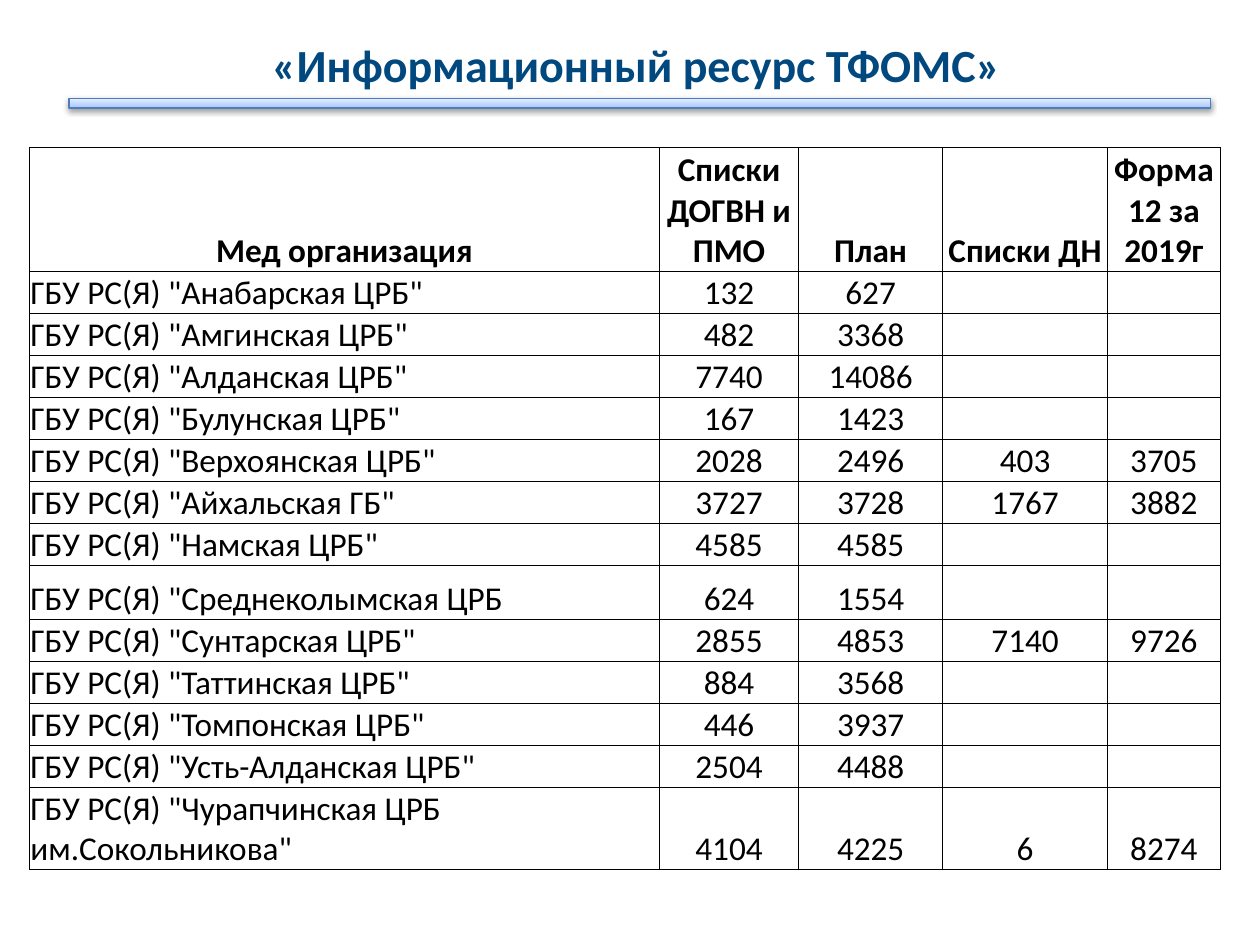
"""Build the slide comparing screening lists and plans by medical organisation."""
from dataclasses import dataclass

from lxml import etree
from pptx import Presentation
from pptx import util as u
from pptx.dml.color import RGBColor
from pptx.enum import shapes, text
from pptx.oxml import ns

FONT = "Calibri"
BLACK = RGBColor(0x00, 0x00, 0x00)
NAVY = RGBColor(0x00, 0x48, 0x7E)
BLUE = RGBColor(0x4B, 0x7E, 0xBC)
BAR_STOPS = (
    (0, RGBColor(0xA4, 0xC4, 0xFF)),
    (35, RGBColor(0xBF, 0xD4, 0xFF)),
    (100, RGBColor(0xE6, 0xEE, 0xFF)),
)
CENTER, LEFT = text.PP_ALIGN.CENTER, text.PP_ALIGN.LEFT
HEADER_HEIGHT, ROW_HEIGHT = 70.6, 24


@dataclass(frozen=True)
class Column:
    title: str
    width: float
    align: text.PP_ALIGN = CENTER


@dataclass(frozen=True)
class Organisation:
    name: str
    screened: int
    plan: int
    followed: int | None = None
    form: int | None = None
    height: float = ROW_HEIGHT

    def values(self) -> list[str]:
        numbers = (self.screened, self.plan, self.followed, self.form)
        name = f"ГБУ РС(Я) {self.name}"
        return [name] + ["" if number is None else str(number) for number in numbers]


COLUMNS = (
    Column("Мед организация", 360, LEFT),
    Column("Списки ДОГВН и ПМО", 79.6),
    Column("План", 82.2),
    Column("Списки ДН", 94.4),
    Column("Форма 12 за 2019г", 64.2),
)
ORGANISATIONS = (
    Organisation('"Анабарская ЦРБ"', 132, 627),
    Organisation('"Амгинская ЦРБ"', 482, 3368),
    Organisation('"Алданская ЦРБ"', 7740, 14086),
    Organisation('"Булунская ЦРБ"', 167, 1423),
    Organisation('"Верхоянская ЦРБ"', 2028, 2496, 403, 3705),
    Organisation('"Айхальская ГБ"', 3727, 3728, 1767, 3882),
    Organisation('"Намская ЦРБ"', 4585, 4585),
    Organisation('"Среднеколымская ЦРБ', 624, 1554, height=31),
    Organisation('"Сунтарская ЦРБ"', 2855, 4853, 7140, 9726),
    Organisation('"Таттинская ЦРБ"', 884, 3568),
    Organisation('"Томпонская ЦРБ"', 446, 3937),
    Organisation('"Усть-Алданская ЦРБ"', 2504, 4488),
    Organisation('"Чурапчинская ЦРБ им.Сокольникова"', 4104, 4225, 6, 8274, height=47),
)


def add_node(parent, tag: str, **attributes):
    node = etree.SubElement(parent, ns.qn(tag))
    for name, value in attributes.items():
        node.set(name, str(value))
    return node


def write(frame, words: str, *, size: float, color: RGBColor = BLACK,
          bold: bool = False, align: text.PP_ALIGN = CENTER) -> None:
    para = frame.paragraphs[0]
    para.alignment = align
    if words:
        span = para.add_run()
        span.text = words
        span.font.name, span.font.size = FONT, u.Pt(size)
        span.font.bold, span.font.color.rgb = bold, color


def add_title(page) -> None:
    box = page.shapes.add_textbox(u.Pt(39.6), u.Pt(16.6), u.Pt(648), u.Pt(39.6))
    box.text_frame.word_wrap = True
    box.text_frame.vertical_anchor = text.MSO_ANCHOR.MIDDLE
    write(box.text_frame, "«Информационный ресурс ТФОМС»", size=26.3, color=NAVY, bold=True)


def add_bar(page) -> None:
    bar = page.shapes.add_shape(shapes.MSO_SHAPE.RECTANGLE,
                                u.Pt(39.4), u.Pt(56.2), u.Pt(652.4), u.Pt(5.6))
    bar.shadow.inherit = False
    bar.line.color.rgb, bar.line.width = BLUE, u.Pt(0.75)
    bar.fill.gradient()
    bar.fill.gradient_angle = 90
    properties = bar.element.spPr
    stops = properties.find(".//" + ns.qn("a:gsLst"))
    for stop in list(stops):
        stops.remove(stop)
    for position, color in BAR_STOPS:
        stop = add_node(stops, "a:gs", pos=position * 1000)
        add_node(stop, "a:srgbClr", val=color)
    shadow = add_node(properties.find(ns.qn("a:effectLst")), "a:outerShdw",
                      blurRad=int(u.Pt(3.1)), dist=int(u.Pt(1.6)), dir=5400000, rotWithShape=0)
    add_node(add_node(shadow, "a:srgbClr", val=BLACK), "a:alpha", val=38000)


def style_cell(cell) -> None:
    cell.margin_left = cell.margin_right = cell.margin_top = u.Pt(0.6)
    cell.margin_bottom = 0
    cell.vertical_anchor = text.MSO_ANCHOR.BOTTOM
    properties = cell._tc.get_or_add_tcPr()
    for side in ("a:lnL", "a:lnR", "a:lnT", "a:lnB"):
        border = add_node(properties, side, w=int(u.Pt(0.5)))
        add_node(add_node(border, "a:solidFill"), "a:srgbClr", val=BLACK)
    cell.fill.background()


def add_organisations(page) -> None:
    heights = [HEADER_HEIGHT] + [organisation.height for organisation in ORGANISATIONS]
    width = sum(column.width for column in COLUMNS)
    table = page.shapes.add_table(len(heights), len(COLUMNS), u.Pt(16.8), u.Pt(84.4),
                                  u.Pt(width), u.Pt(sum(heights))).table
    table.horz_banding = False
    for index, column in enumerate(COLUMNS):
        table.columns[index].width = u.Pt(column.width)
    rows = [[column.title for column in COLUMNS]]
    rows += [organisation.values() for organisation in ORGANISATIONS]
    for row, (height, words) in enumerate(zip(heights, rows)):
        table.rows[row].height = u.Pt(height)
        for index, column in enumerate(COLUMNS):
            cell = table.cell(row, index)
            style_cell(cell)
            write(cell.text_frame, words[index], size=19, bold=row == 0,
                  align=column.align if row else CENTER)


def main() -> None:
    deck = Presentation()
    deck.slide_width, deck.slide_height = u.Pt(720), u.Pt(540)
    page = deck.slides.add_slide(deck.slide_layouts[6])
    add_organisations(page)
    add_title(page)
    add_bar(page)
    deck.save("out.pptx")


if __name__ == "__main__":
    main()
